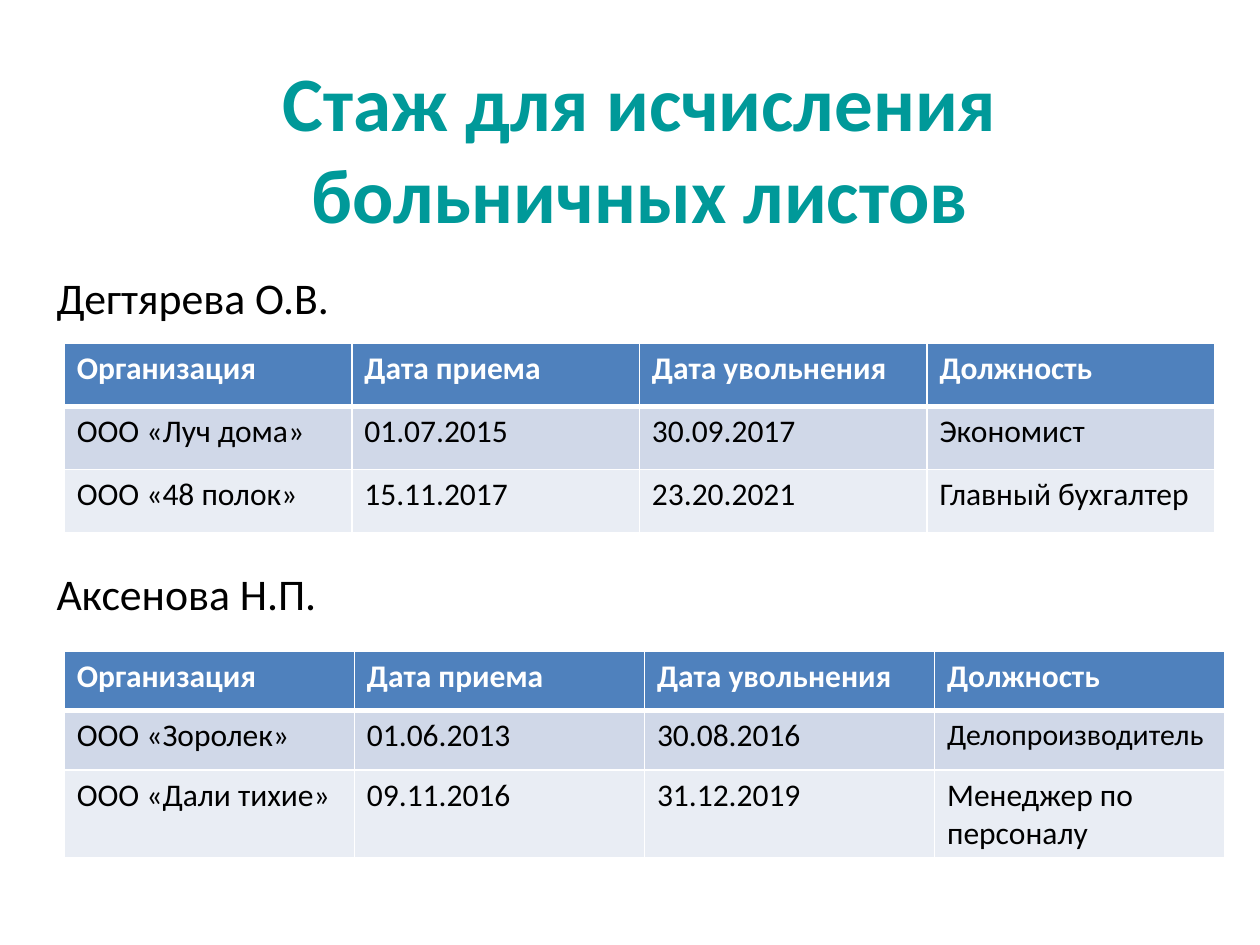
"""Build a slide with two employment history tables for sick leave calculation."""
from dataclasses import dataclass

from lxml import etree
from pptx import Presentation
from pptx.dml.color import RGBColor
from pptx.enum.text import MSO_ANCHOR, PP_ALIGN
from pptx.oxml.ns import qn
from pptx.util import Inches, Pt

MIDDLE, TOP = MSO_ANCHOR.MIDDLE, MSO_ANCHOR.TOP
CENTER, JUSTIFY, LEFT = PP_ALIGN.CENTER, PP_ALIGN.JUSTIFY, PP_ALIGN.LEFT

SLIDE_WIDTH, SLIDE_HEIGHT = Inches(10), Inches(7.5)
GRID_COLUMNS, GRID_ROWS = 100, 75
FONT = "Calibri"
COLORS = {
    "title": "009999",
    "text": "000000",
    "header_text": "FFFFFF",
    "header": "4F81BD",
    "odd_row": "D0D8E8",
    "even_row": "E9EDF4",
    "border": "FFFFFF",
}
ROW_FILLS = ("header", "odd_row", "even_row")
THIN, THICK = 1, 3
HEADINGS = ("Организация", "Дата приема", "Дата увольнения", "Должность")


@dataclass(frozen=True)
class Area:
    column: float
    row: float
    columns: float
    rows: float

    def lengths(self) -> tuple[int, int, int, int]:
        """Return left, top, width and height on the slide."""
        column, row = SLIDE_WIDTH / GRID_COLUMNS, SLIDE_HEIGHT / GRID_ROWS
        return (int(self.column * column), int(self.row * row),
                int(self.columns * column), int(self.rows * row))


@dataclass(frozen=True)
class TextStyle:
    size: float
    color: str
    bold: bool = False
    alignment: PP_ALIGN = LEFT


@dataclass(frozen=True)
class TextBlock:
    area: Area
    paragraphs: tuple[str, ...]
    style: TextStyle
    anchor: MSO_ANCHOR = TOP
    gap: float = 0


@dataclass(frozen=True)
class History:
    area: Area
    row_shares: tuple[float, ...]
    jobs: tuple[tuple[str, ...], ...]


HEADER_STYLE = TextStyle(18, "header_text", bold=True)
BODY_STYLE = TextStyle(18, "text")
SMALL_STYLE = TextStyle(17, "text")
SPECIAL_STYLES = {"Делопроизводитель": SMALL_STYLE}

TEXT_BLOCKS = (
    TextBlock(Area(5.9, 3.6, 89.8, 16.1),
              ("Стаж для исчисления больничных листов",),
              TextStyle(44, "title", True, CENTER), MIDDLE),
    TextBlock(Area(3.5, 21, 92.9, 49.6), ("Дегтярева О.В.", "Аксенова Н.П."),
              TextStyle(25, "text", alignment=JUSTIFY), gap=139),
)
HISTORIES = (
    History(Area(5.1, 27.25, 91.3, 15), (1, 1, 1), (
        ("ООО «Луч дома»", "01.07.2015", "30.09.2017", "Экономист"),
        ("ООО «48 полок»", "15.11.2017", "23.20.2021", "Главный бухгалтер"),
    )),
    History(Area(5.1, 51.7, 92.1, 16.4), (4.7, 4.7, 7), (
        ("ООО «Зоролек»", "01.06.2013", "30.08.2016", "Делопроизводитель"),
        ("ООО «Дали тихие»", "09.11.2016", "31.12.2019",
         "Менеджер по персоналу"),
    )),
)


def color(name: str) -> RGBColor:
    """Look up a palette colour."""
    return RGBColor.from_string(COLORS[name])


def write(paragraph, text: str, style: TextStyle) -> None:
    """Fill a paragraph with one formatted run."""
    paragraph.alignment = style.alignment
    run = paragraph.add_run()
    run.text = text
    values = {"name": FONT, "size": Pt(style.size), "bold": style.bold}
    for attribute, value in values.items():
        setattr(run.font, attribute, value)
    run.font.color.rgb = color(style.color)


def add_text(slide, block: TextBlock) -> None:
    """Add a text box with evenly spaced paragraphs."""
    frame = slide.shapes.add_textbox(*block.area.lengths()).text_frame
    values = {"word_wrap": True, "vertical_anchor": block.anchor}
    for attribute, value in values.items():
        setattr(frame, attribute, value)
    for index, text in enumerate(block.paragraphs):
        paragraph = frame.add_paragraph() if index else frame.paragraphs[0]
        paragraph.space_before = Pt(block.gap if index else 0)
        write(paragraph, text, block.style)


def set_borders(cell, widths: dict[str, float]) -> None:
    """Draw the cell's borders in the order the schema asks for."""
    properties = cell._tc.get_or_add_tcPr()
    for position, (side, width) in enumerate(widths.items()):
        line = etree.Element(qn(f"a:ln{side}"), w=str(Pt(width)))
        fill = etree.SubElement(line, qn("a:solidFill"))
        etree.SubElement(fill, qn("a:srgbClr"), val=COLORS["border"])
        properties.insert(position, line)


def add_history(slide, history: History) -> None:
    """Add one employment table."""
    records = (HEADINGS, *history.jobs)
    left, top, width, height = history.area.lengths()
    table = slide.shapes.add_table(
        len(records), len(HEADINGS), left, top, width, height).table
    for column in table.columns:
        column.width = width // len(HEADINGS)
    for index, (record, share) in enumerate(zip(records, history.row_shares)):
        table.rows[index].height = int(height * share / sum(history.row_shares))
        borders = {"L": THIN, "R": THIN,
                   "T": THICK if index == 1 else THIN,
                   "B": THICK if index == 0 else THIN}
        for column, text in enumerate(record):
            cell = table.cell(index, column)
            cell.fill.solid()
            cell.fill.fore_color.rgb = color(ROW_FILLS[index])
            set_borders(cell, borders)
            style = SPECIAL_STYLES.get(text, BODY_STYLE) if index else HEADER_STYLE
            write(cell.text_frame.paragraphs[0], text, style)


def main() -> None:
    """Create and save the presentation."""
    presentation = Presentation()
    size = {"slide_width": SLIDE_WIDTH, "slide_height": SLIDE_HEIGHT}
    for attribute, value in size.items():
        setattr(presentation, attribute, value)
    slide = presentation.slides.add_slide(presentation.slide_layouts[6])
    for block in TEXT_BLOCKS:
        add_text(slide, block)
    for history in HISTORIES:
        add_history(slide, history)
    presentation.save("out.pptx")


if __name__ == "__main__":
    main()
